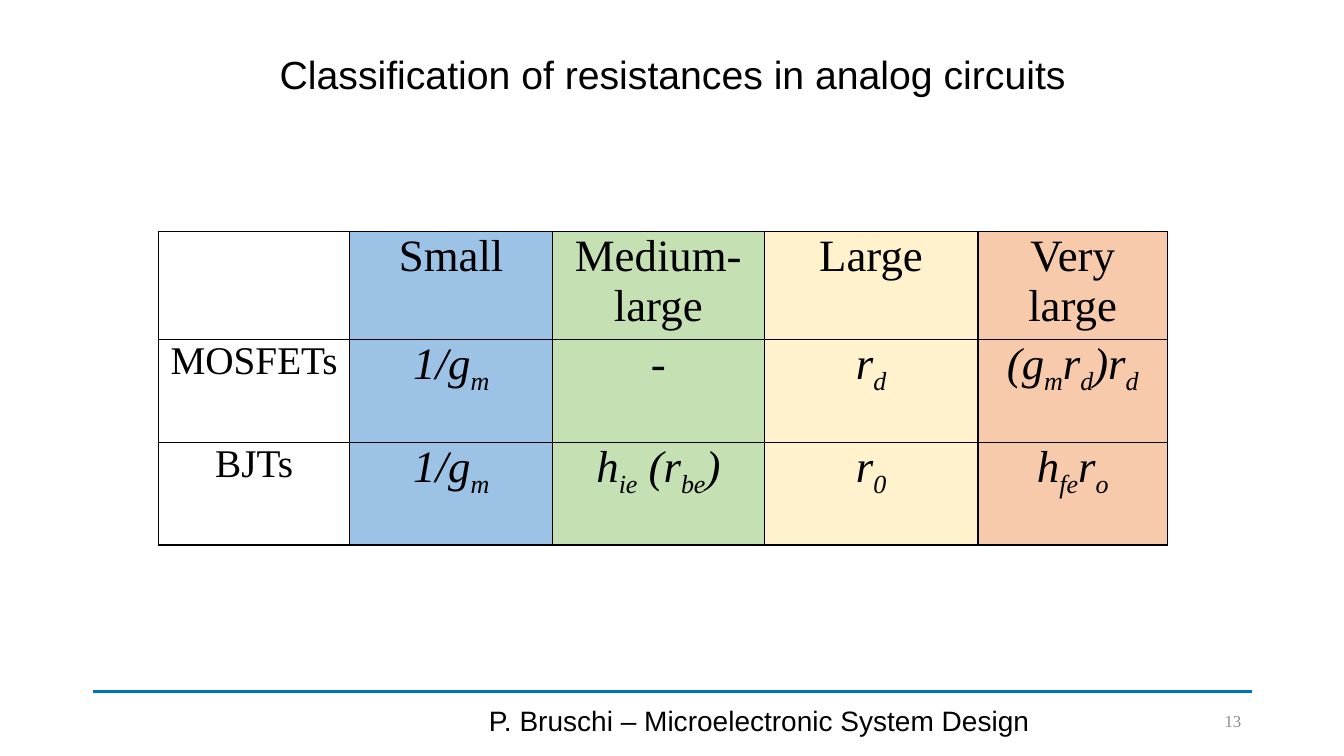
"""Build the slide that classifies resistances in analog circuits."""
from dataclasses import dataclass

from lxml.etree import SubElement
from pptx import Presentation
from pptx.dml.color import RGBColor as RGB
from pptx.enum.shapes import MSO_CONNECTOR as Connector
from pptx.enum.text import MSO_ANCHOR as Anchor, PP_ALIGN as Align
from pptx.oxml import parse_xml
from pptx.oxml.ns import nsdecls, qn
from pptx.util import Inches, Pt


@dataclass(frozen=True)
class Theme:
    sans: str = "Arial"
    serif: str = "Times New Roman"
    ink: str = "000000"
    muted: str = "8C8C8C"
    rule: str = "0070C0"
    columns: tuple = (None, "9CC2E5", "C5E0B3", "FFF2CC", "F7CAAC")
    title: int = 28
    footer: int = 20
    number: int = 12
    cell: int = 32
    device: int = 28


T = Theme()


def write(tf, text, font=T.sans, size=T.cell, color=T.ink, align=Align.CENTER,
          italic=False, spacing=None, after=None):
    """Write one paragraph; parts between underscores become subscripts."""
    tf.word_wrap = True
    p = tf.paragraphs[0]
    p.alignment = align
    p.line_spacing = spacing
    p.space_after = after
    for i, part in enumerate(text.split("_")):
        if not part:
            continue
        r = p.add_run()
        r.text = part
        r.font.name = font
        r.font.size = Pt(size)
        r.font.italic = italic
        r.font.color.rgb = RGB.from_string(color)
        if i % 2:
            r.font._element.set("baseline", "-25000")


prs = Presentation()
prs.slide_width, prs.slide_height = Inches(13.33), Inches(7.5)
s = prs.slides.add_slide(prs.slide_layouts[6])

rule = s.shapes.add_connector(Connector.STRAIGHT, Inches(0.92), Inches(6.86),
                              Inches(12.42), Inches(6.86))
rule.line.color.rgb = RGB.from_string(T.rule)
rule.line.width = Pt(2.75)
SubElement(rule._element.spPr, qn("a:effectLst"))

texts = [
    ((0.92, 0.4, 11.5, 0.72), "Classification of resistances in analog circuits",
     dict(size=T.title, spacing=0.9)),
    ((4.42, 6.95, 6.22, 0.4), "P. Bruschi – Microelectronic System Design",
     dict(size=T.footer)),
    ((11.45, 6.95, 0.96, 0.4), "13",
     dict(font=T.serif, size=T.number, color=T.muted, align=Align.RIGHT)),
]
for box, text, style in texts:
    tf = s.shapes.add_textbox(*map(Inches, box)).text_frame
    tf.vertical_anchor = Anchor.MIDDLE
    write(tf, text, **style)

rows = [
    ("", "Small", "Medium-large", "Large", "Very large"),
    ("MOSFETs", "1/g_m_", "-", "r_d_", "(g_m_r_d_)r_d_"),
    ("BJTs", "1/g_m_", "h_ie_ (r_be_)", "r_0_", "h_fe_r_o_"),
]
widths = (1.9, 2.01, 2.1, 2.12, 1.88)
row_height = 1.02
table = s.shapes.add_table(len(rows), len(widths), Inches(1.57), Inches(2.3),
                           Inches(sum(widths)), Inches(row_height * len(rows))).table
table.first_row = table.horz_banding = False
for column, width in zip(table.columns, widths):
    column.width = Inches(width)
for row in table.rows:
    row.height = Inches(row_height)

for i, row in enumerate(rows):
    for j, text in enumerate(row):
        cell = table.cell(i, j)
        cell.margin_left = cell.margin_right = Inches(0.07)
        cell.margin_top = cell.margin_bottom = 0
        for side in "LRTB":
            cell._tc.get_or_add_tcPr().append(parse_xml(
                f'<a:ln{side} {nsdecls("a")} w="{Pt(1)}"><a:solidFill>'
                f'<a:srgbClr val="{T.ink}"/></a:solidFill></a:ln{side}>'))
        if T.columns[j]:
            cell.fill.solid()
            cell.fill.fore_color.rgb = RGB.from_string(T.columns[j])
        else:
            cell.fill.background()
        write(cell.text_frame, text, font=T.serif, size=T.cell if j else T.device,
              italic=i > 0 and j > 0, after=Pt(3))

prs.save("out.pptx")
